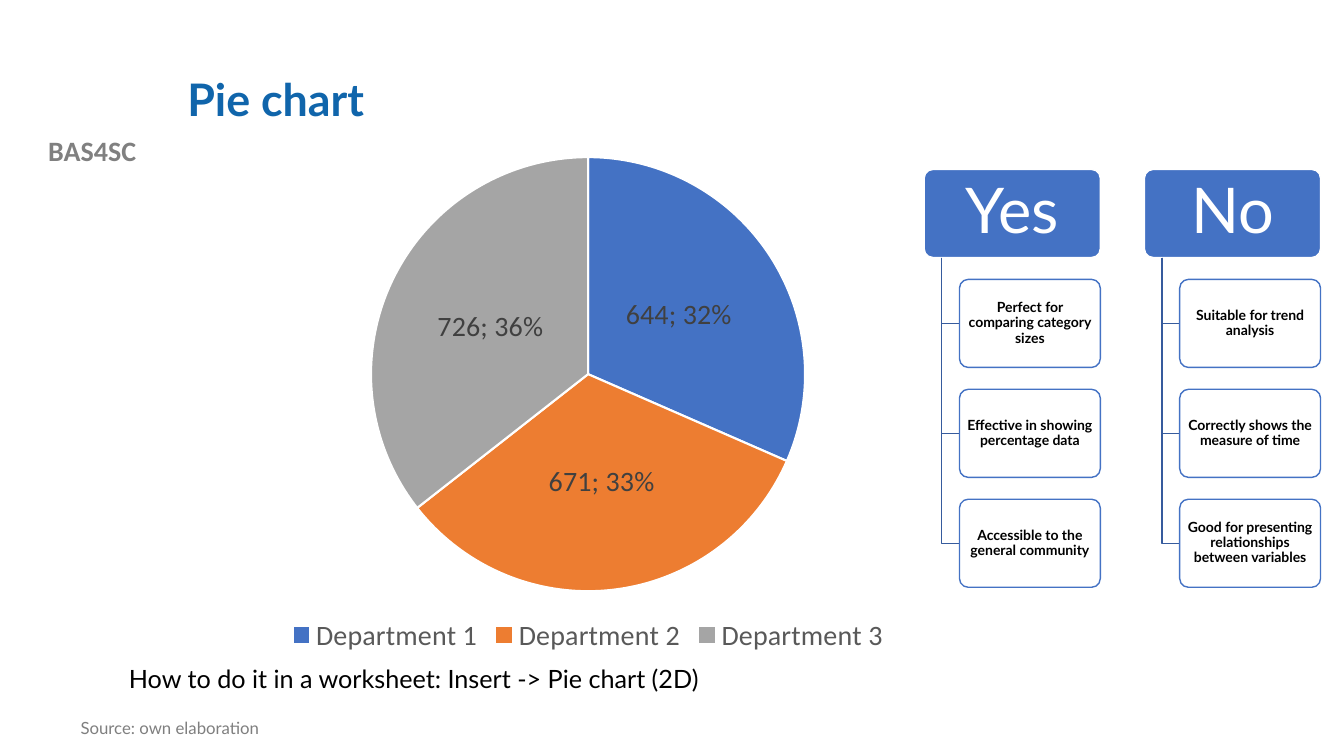
from lxml.etree import SubElement
from pptx import Presentation
from pptx.chart.data import CategoryChartData as Data
from pptx.dml.color import RGBColor
from pptx.enum.chart import XL_CHART_TYPE as Kind, XL_LABEL_POSITION as Spot, XL_LEGEND_POSITION as Side
from pptx.enum.shapes import MSO_SHAPE as Form
from pptx.enum.text import MSO_ANCHOR as Anchor, PP_ALIGN as Align
from pptx.oxml.ns import qn
from pptx.util import Cm, Pt

WHITE = RGBColor(0xFF, 0xFF, 0xFF)
BLACK = RGBColor(0x00, 0x00, 0x00)
BLUE = RGBColor(0x44, 0x72, 0xC4)
ORANGE = RGBColor(0xED, 0x7D, 0x31)
SILVER = RGBColor(0xA5, 0xA5, 0xA5)
NAVY = RGBColor(0x36, 0x5B, 0x9D)
TITLE = RGBColor(0x10, 0x65, 0xAB)
GRAY = RGBColor(0x80, 0x80, 0x80)
NOTE = RGBColor(0x7F, 0x7F, 0x7F)
LABEL = RGBColor(0x40, 0x40, 0x40)
LEGEND = RGBColor(0x59, 0x59, 0x59)

SHARES = {
    "Department 1": (644, BLUE),
    "Department 2": (671, ORANGE),
    "Department 3": (726, SILVER),
}
LISTS = {
    "Yes": [
        "Perfect for comparing category sizes",
        "Effective in showing percentage data",
        "Accessible to the general community",
    ],
    "No": [
        "Suitable for trend analysis",
        "Correctly shows the measure of time",
        "Good for presenting relationships between variables",
    ],
}
LEFT, TOP, STEP = 23.29, 4.27, 5.55
HEAD_W, BOX_W, BOX_H, ROW = 4.44, 3.55, 2.22, 2.77
STEM, INDENT = 0.44, 0.89


def apply(item, values):
    for name, value in values.items():
        setattr(item, name, value)


def style(font, size, color, face="Lato", bold=False):
    apply(font, {"size": Pt(size), "name": face, "bold": bold})
    font.color.rgb = color


def write(frame, text, size, color, face="Lato", bold=False, frame_set=None, para_set=None):
    apply(frame, {"word_wrap": True, **(frame_set or {})})
    para = frame.paragraphs[0]
    para.text = text
    apply(para, para_set or {})
    style(para.runs[0].font, size, color, face, bold)


def add_text(slide, area, text, size, color, **look):
    box = slide.shapes.add_textbox(*map(Cm, area))
    write(box.text_frame, text, size, color, **look)


def add_box(slide, area, text, size, color, fill, line, pad, bold=False):
    box = slide.shapes.add_shape(Form.ROUNDED_RECTANGLE, *map(Cm, area))
    box.adjustments[0] = 0.1
    box.shadow.inherit = False
    box.fill.solid()
    box.fill.fore_color.rgb = fill
    box.line.color.rgb = line
    box.line.width = Pt(1)
    sides = {"margin_" + side: Cm(pad) for side in ("left", "right", "top", "bottom")}
    write(box.text_frame, text, size, color, bold=bold,
          frame_set={"vertical_anchor": Anchor.MIDDLE, **sides},
          para_set={"alignment": Align.CENTER, "line_spacing": 0.9})


def add_elbow(slide, left, top, right, bottom):
    path = slide.shapes.build_freeform(Cm(left), Cm(top))
    path.add_line_segments([(Cm(left), Cm(bottom)), (Cm(right), Cm(bottom))], close=False)
    elbow = path.convert_to_shape()
    elbow.shadow.inherit = False
    elbow.fill.background()
    elbow.line.color.rgb = NAVY
    elbow.line.width = Pt(1)


def add_list(slide, left, head, items):
    add_box(slide, (left, TOP, HEAD_W, BOX_H), head, 45, WHITE, BLUE, WHITE, 0.2)
    for row, item in enumerate(items, 1):
        top = TOP + row * ROW
        add_elbow(slide, left + STEM, TOP + BOX_H, left + INDENT, top + BOX_H / 2)
        add_box(slide, (left + INDENT, top, BOX_W, BOX_H), item, 10, BLACK, WHITE, BLUE, 0.12, True)


def add_pie(slide, area):
    data = Data()
    data.categories = list(SHARES)
    data.add_series("Series 1", [value for value, _ in SHARES.values()])
    chart = slide.shapes.add_chart(Kind.PIE, *map(Cm, area), data).chart
    apply(chart, {"has_title": False, "has_legend": True})
    style(chart.font, 20, BLACK, "Calibri")
    apply(chart.legend, {"position": Side.BOTTOM, "include_in_layout": False})
    style(chart.legend.font, 20, LEGEND, "Calibri")
    plot = chart.plots[0]
    apply(plot, {"vary_by_categories": True, "has_data_labels": True})
    for index, (_, color) in enumerate(SHARES.values()):
        form = plot.series[0].points[index].format
        form.fill.solid()
        form.fill.fore_color.rgb = color
        form.line.color.rgb = WHITE
        form.line.width = Pt(1.5)
    labels = plot.data_labels
    apply(labels, {"show_value": True, "show_percentage": True, "position": Spot.CENTER})
    style(labels.font, 20, LABEL, "Calibri")
    node = labels._element
    mark = SubElement(node, qn("c:separator"))
    mark.text = "; "
    node.find(qn("c:showBubbleSize")).addnext(mark)


def main():
    deck = Presentation()
    apply(deck, {"slide_width": Cm(33.87), "slide_height": Cm(19.05)})
    slide = deck.slides.add_slide(deck.slide_layouts[6])
    add_text(slide, (0, 3.25, 4.65, 1.12), "BAS4SC", 20, GRAY, face="Calibri", bold=True,
             para_set={"alignment": Align.CENTER})
    add_text(slide, (4.47, 1.02, 27.08, 3.1), "Pie chart", 32, TITLE, bold=True,
             frame_set={"vertical_anchor": Anchor.MIDDLE}, para_set={"line_spacing": 0.9})
    add_text(slide, (1.78, 18.01, 12.73, 0.81), "Source: own elaboration", 12, NOTE,
             para_set={"line_spacing": 0.9})
    add_pie(slide, (4.47, 3.61, 20.7, 12.98))
    for col, (head, items) in enumerate(LISTS.items()):
        add_list(slide, LEFT + col * STEP, head, items)
    add_text(slide, (3, 16.59, 20.02, 1.07),
             "How to do it in a worksheet: Insert -> Pie chart (2D)", 18, BLACK)
    deck.save("out.pptx")


if __name__ == "__main__":
    main()
